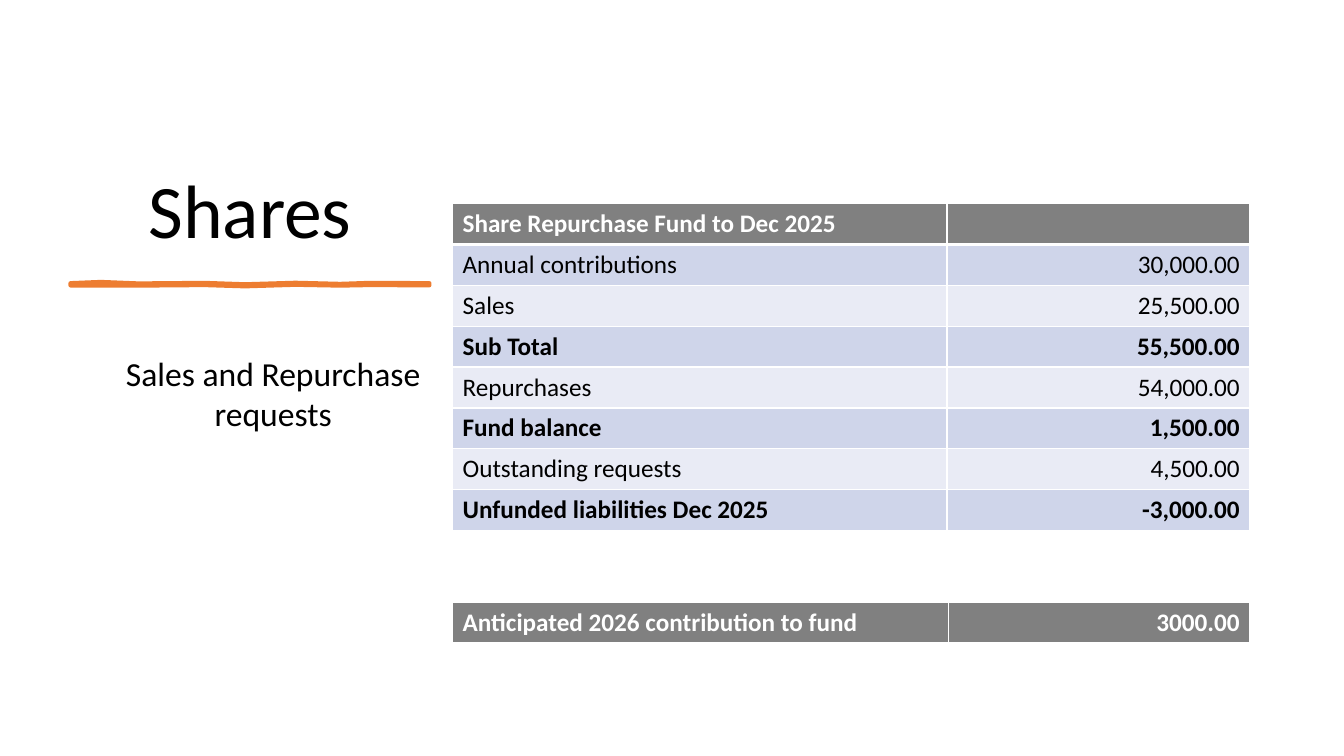
from lxml.etree import SubElement
from pptx import Presentation
from pptx.dml.color import RGBColor
from pptx.enum.text import MSO_ANCHOR as Anchor, MSO_AUTO_SIZE as AutoSize, PP_ALIGN as Align
from pptx.oxml.ns import qn
from pptx.util import Pt

BLACK = RGBColor(0x00, 0x00, 0x00)
WHITE = RGBColor(0xFF, 0xFF, 0xFF)
GRAY = RGBColor(0x80, 0x80, 0x80)
ORANGE = RGBColor(0xED, 0x7D, 0x31)
BANDS = (RGBColor(0xE9, 0xEB, 0xF5), RGBColor(0xCF, 0xD5, 0xEA))

TABLE_LEFT = 323.3
ROW_HEIGHT = 29.2
FUND_ROWS = [
    ("Share Repurchase Fund to Dec 2025", ""),
    ("Annual contributions", "30,000.00"),
    ("Sales", "25,500.00"),
    ("Sub Total", "55,500.00"),
    ("Repurchases", "54,000.00"),
    ("Fund balance", "1,500.00"),
    ("Outstanding requests", "4,500.00"),
    ("Unfunded liabilities Dec 2025", "-3,000.00"),
]
BOLD_ROWS = {"Sub Total", "Fund balance", "Unfunded liabilities Dec 2025"}
CONTRIBUTION_ROWS = [("Anticipated 2026 contribution to fund", "3000.00")]
UPPER_EDGE = [(50.4, 202.3), (72, 201.4), (99, 202.5), (146, 202.1), (175, 203.1),
              (211, 202), (243, 202.8), (264, 202.1), (306.7, 202.3)]
LOWER_EDGE = [(306.7, 203.8), (264, 203.6), (243, 204), (211, 203.4), (175, 204.5),
              (146, 203.6), (99, 204), (72, 203.9), (50.4, 203.9)]


def write_text(frame, text, size=18, color=BLACK, bold=False, align=Align.LEFT, spacing=None):
    paragraph = frame.paragraphs[0]
    paragraph.alignment = align
    if spacing:
        paragraph.line_spacing = spacing
    run = paragraph.add_run()
    run.text = text
    run.font.name = "Calibri"
    run.font.size = Pt(size)
    run.font.bold = bold
    run.font.color.rgb = color


class SharesSlide:
    """Draws the elements of the shares slide."""

    def __init__(self, presentation):
        self.slide = presentation.slides.add_slide(presentation.slide_layouts[6])

    def text(self, left, top, width, height, text, anchor=Anchor.TOP,
             auto_size=AutoSize.NONE, **style):
        shape = self.slide.shapes.add_textbox(Pt(left), Pt(top), Pt(width), Pt(height))
        frame = shape.text_frame
        frame.word_wrap = True
        frame.auto_size = auto_size
        frame.vertical_anchor = anchor
        write_text(frame, text, align=Align.CENTER, **style)

    def brush_stroke(self, points):
        outline = [(Pt(x), Pt(y)) for x, y in points]
        builder = self.slide.shapes.build_freeform(*outline[0])
        builder.add_line_segments(outline[1:], close=True)
        shape = builder.convert_to_shape()
        shape.shadow.inherit = False
        shape.fill.solid()
        shape.fill.fore_color.rgb = ORANGE
        shape.line.color.rgb = ORANGE
        shape.line.width = Pt(3)
        SubElement(shape.line._get_or_add_ln(), qn("a:round"))

    def borders(self, cell, bottom):
        properties = cell._tc.get_or_add_tcPr()
        for side, width in (("L", 1), ("R", 1), ("T", 1), ("B", bottom)):
            line = SubElement(properties, qn(f"a:ln{side}"), w=str(Pt(width)))
            SubElement(SubElement(line, qn("a:solidFill")), qn("a:srgbClr"), val=str(WHITE))

    def table(self, top, widths, rows):
        shape = self.slide.shapes.add_table(
            len(rows), len(widths), Pt(TABLE_LEFT), Pt(top),
            Pt(sum(widths)), Pt(ROW_HEIGHT * len(rows)))
        table = shape.table
        table.horz_banding = False
        for column, width in zip(table.columns, widths):
            column.width = Pt(width)
        for index, values in enumerate(rows):
            table.rows[index].height = Pt(ROW_HEIGHT)
            header = index == 0
            for position, value in enumerate(values):
                cell = table.cell(index, position)
                self.borders(cell, bottom=3 if header else 1)
                cell.fill.solid()
                cell.fill.fore_color.rgb = GRAY if header else BANDS[index % 2]
                if value:
                    write_text(cell.text_frame, value,
                               color=WHITE if header else BLACK,
                               bold=header or values[0] in BOLD_ROWS,
                               align=Align.RIGHT if position else Align.LEFT)


def main():
    presentation = Presentation()
    presentation.slide_width = Pt(960)
    presentation.slide_height = Pt(540)
    shares = SharesSlide(presentation)
    shares.text(49.7, 50.4, 270, 135.4, "Shares ", anchor=Anchor.BOTTOM, size=54, spacing=0.9)
    shares.brush_stroke(UPPER_EDGE + LOWER_EDGE)
    shares.text(67, 248.4, 256.3, 65.5, "Sales and Repurchase requests",
                auto_size=AutoSize.SHAPE_TO_FIT_TEXT, size=24)
    shares.table(145.4, (353.1, 216.4), FUND_ROWS)
    shares.table(430.6, (354.5, 215), CONTRIBUTION_ROWS)
    presentation.save("out.pptx")


if __name__ == "__main__":
    main()
